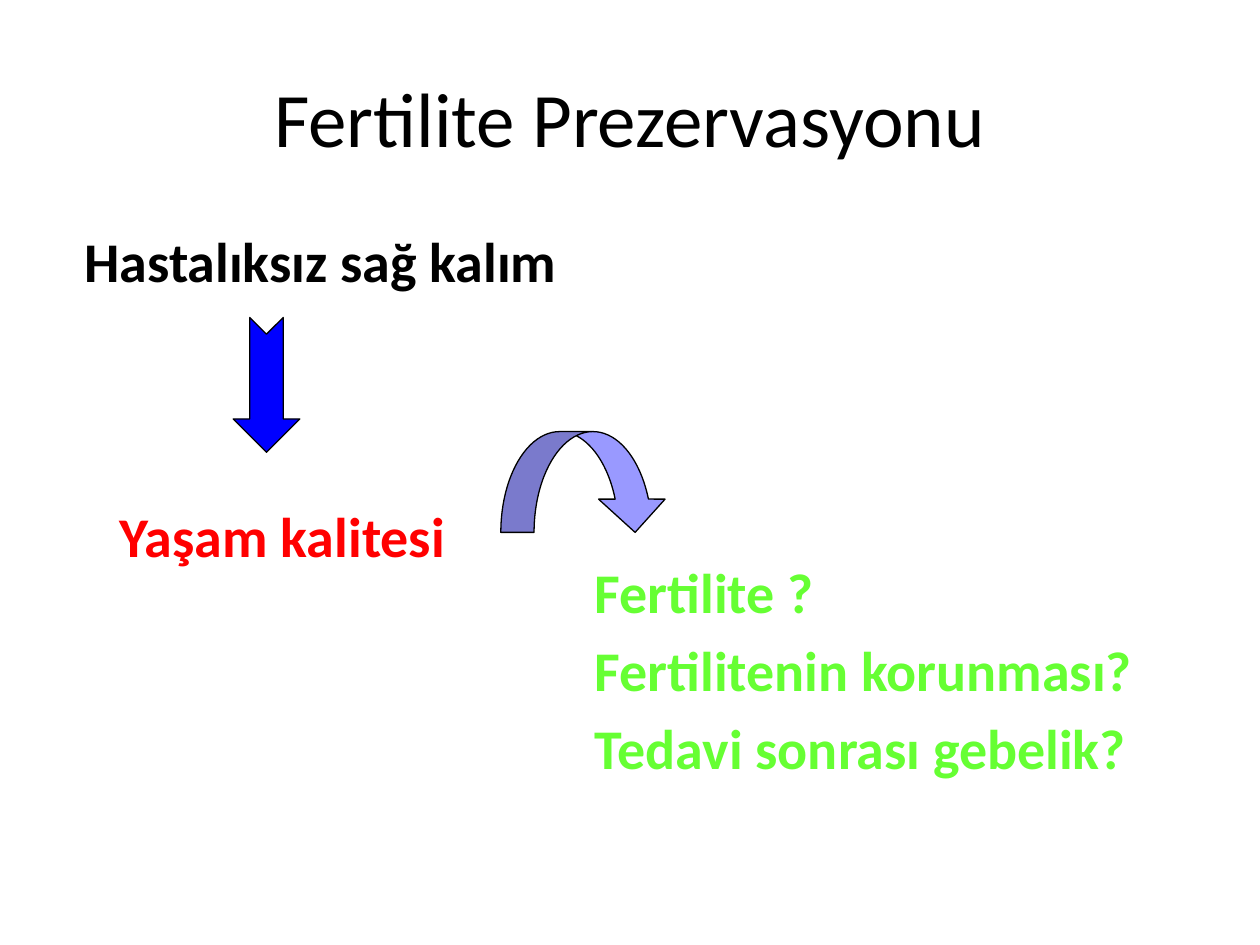
from dataclasses import dataclass

from pptx import Presentation
from pptx.dml.color import RGBColor
from pptx.enum.shapes import MSO_SHAPE
from pptx.enum.text import MSO_ANCHOR, PP_ALIGN
from pptx.util import Inches, Pt

NOTCH = MSO_SHAPE.NOTCHED_RIGHT_ARROW
CURVE = MSO_SHAPE.CURVED_LEFT_ARROW
TOP, MID, LOW = MSO_ANCHOR.TOP, MSO_ANCHOR.MIDDLE, MSO_ANCHOR.BOTTOM
LEFT, CENTER = PP_ALIGN.LEFT, PP_ALIGN.CENTER

WIDE, HIGH = Inches(10), Inches(7.5)
COLS, ROWS = 100, 75
FONT = "Calibri"
COLORS = {
    "black": "000000",
    "red": "FF0000",
    "green": "66FF33",
    "blue": "0000FF",
    "lilac": "9999FF",
}


@dataclass(frozen=True)
class Box:
    col: float
    row: float
    cols: float
    rows: float

    def place(self) -> tuple[int, int, int, int]:
        return (
            round(WIDE * self.col / COLS),
            round(HIGH * self.row / ROWS),
            round(WIDE * self.cols / COLS),
            round(HIGH * self.rows / ROWS),
        )


@dataclass(frozen=True)
class Arrow:
    kind: MSO_SHAPE
    box: Box
    turn: int
    fill: str
    bends: tuple[float, ...]


ARROWS = (
    Arrow(CURVE, Box(42.4, 31.6, 8, 13.3), 270, "lilac", (0.33, 0.66, 0.33)),
    Arrow(NOTCH, Box(15.8, 27.9, 10.7, 5.3), 90, "blue", (0.5, 0.5)),
)


def color(name: str) -> RGBColor:
    return RGBColor.from_string(COLORS[name])


def write(slide, box: Box, text: str, *, size: int = 32, tint: str = "black",
          bold: bool = True, align: PP_ALIGN = LEFT,
          anchor: MSO_ANCHOR = TOP, inset: float = 0.1) -> None:
    frame = slide.shapes.add_textbox(*box.place()).text_frame
    frame.word_wrap = True
    frame.vertical_anchor = anchor
    frame.margin_left = Inches(inset)
    frame.text = text
    for spot, para in enumerate(frame.paragraphs):
        para.alignment = align
        para.space_before = Pt(size * 0.2 if spot else 0)
        font = para.runs[0].font
        font.name, font.size, font.bold = FONT, Pt(size), bold
        font.color.rgb = color(tint)


def draw(slide, arrow: Arrow) -> None:
    shape = slide.shapes.add_shape(arrow.kind, *arrow.box.place())
    shape.rotation = arrow.turn
    shape.shadow.inherit = False
    for spot, bend in enumerate(arrow.bends):
        shape.adjustments[spot] = bend
    shape.fill.solid()
    shape.fill.fore_color.rgb = color(arrow.fill)
    shape.line.color.rgb = color("black")
    shape.line.width = Pt(0.75)


def main() -> None:
    deck = Presentation()
    deck.slide_width, deck.slide_height = WIDE, HIGH
    slide = deck.slides.add_slide(deck.slide_layouts[6])
    write(slide, Box(5, 3, 90, 12.5), "Fertilite Prezervasyonu",
          size=44, bold=False, align=CENTER, anchor=MID)
    write(slide, Box(5, 17.5, 90, 49.5), "Hastalıksız sağ kalım", inset=0.17)
    for arrow in ARROWS:
        draw(slide, arrow)
    write(slide, Box(40.6, 31.2, 53.5, 43.8),
          "Fertilite ?\nFertilitenin korunması?\nTedavi sonrası gebelik?",
          tint="green", anchor=MID, inset=0.66)
    write(slide, Box(6.7, 32.7, 35.7, 12.9), "Yaşam kalitesi",
          tint="red", anchor=LOW, inset=0.28)
    deck.save("out.pptx")


if __name__ == "__main__":
    main()
